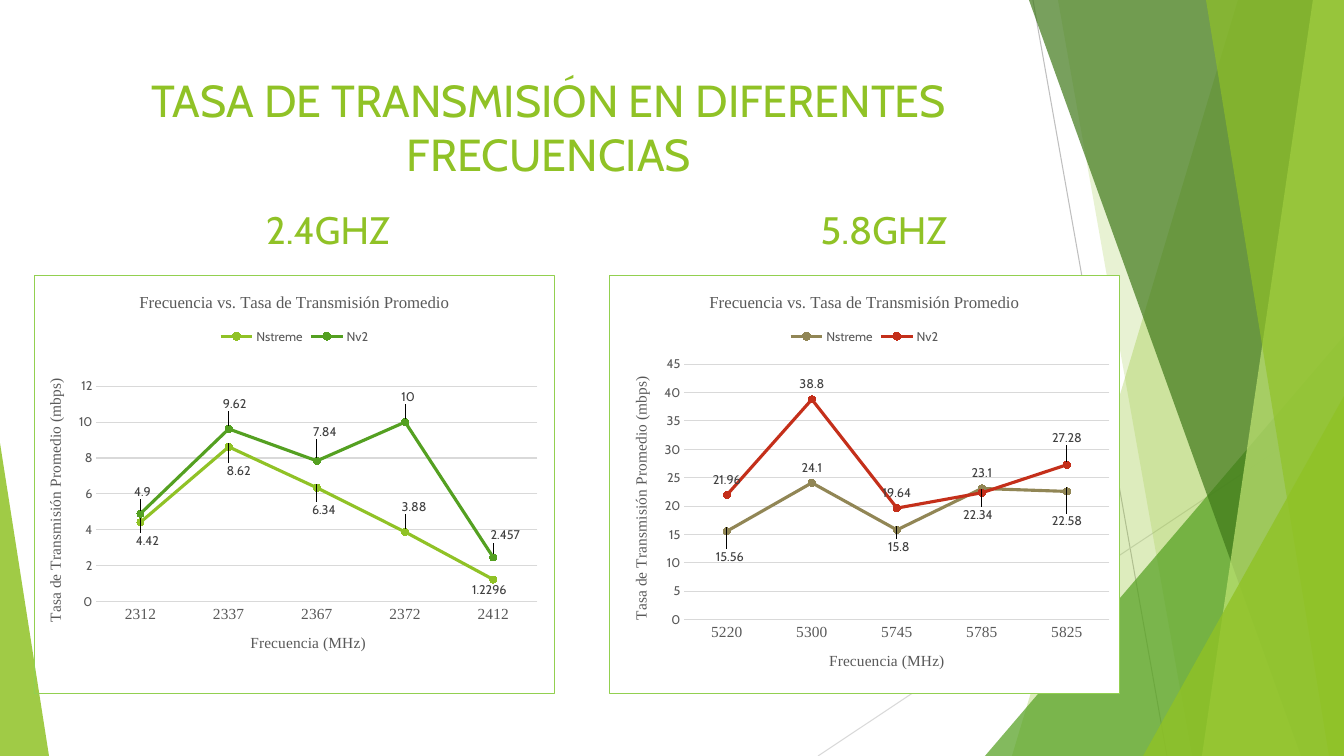
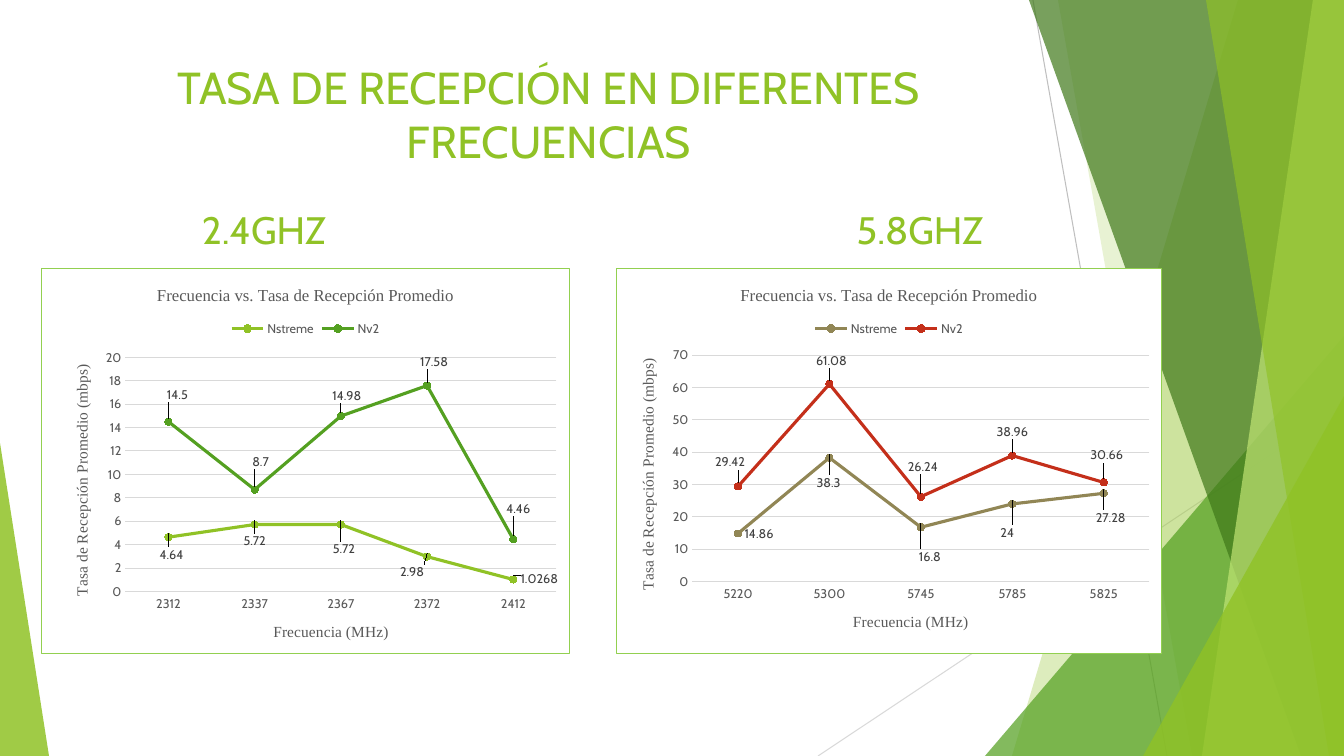
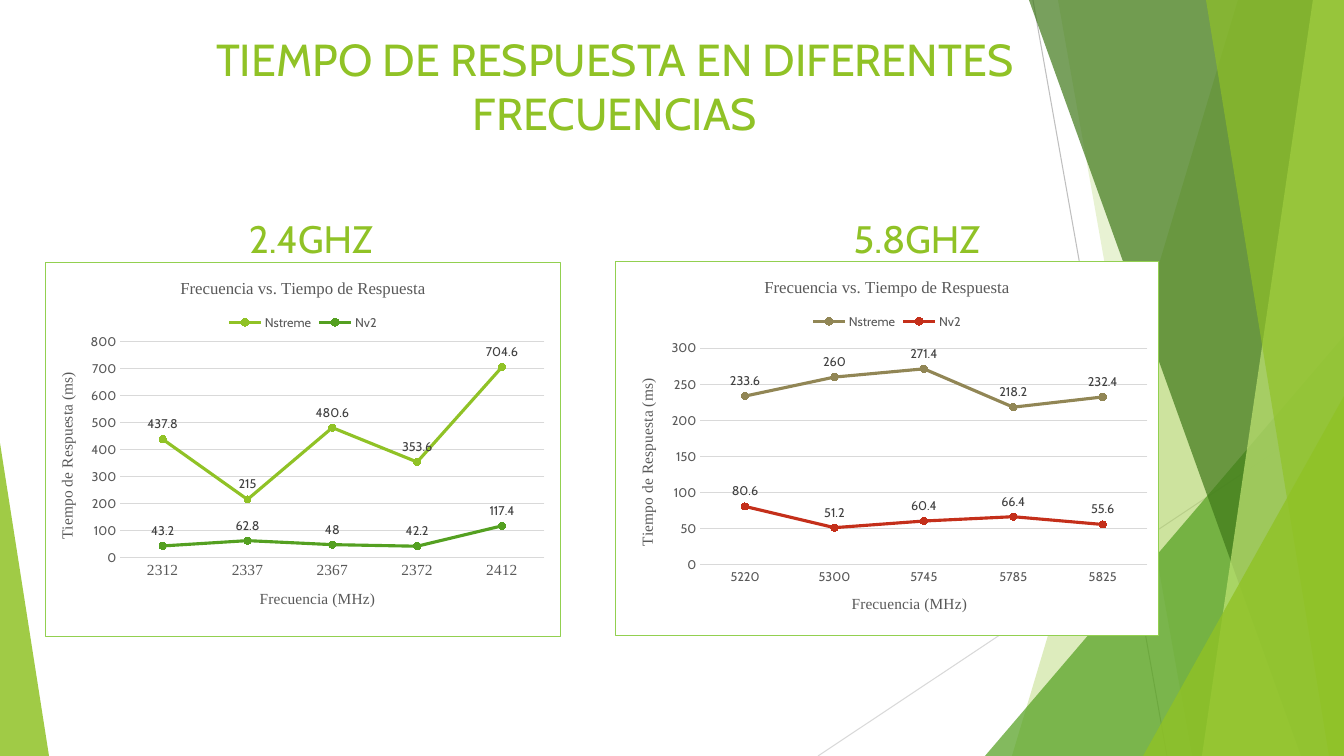
"""Build three slides that compare Nstreme and Nv2 in the 2.4 and 5.8 GHz bands."""
import pptx
import pptx.chart.data
import pptx.dml.color
import pptx.enum.chart
import pptx.enum.shapes
import pptx.enum.text
import pptx.oxml
import pptx.oxml.ns
import pptx.util

RGBColor = pptx.dml.color.RGBColor
WHITE = RGBColor(0xFF, 0xFF, 0xFF)
LIME = RGBColor(0x90, 0xC2, 0x26)
GREEN = RGBColor(0x54, 0xA0, 0x21)
FOREST = RGBColor(0x3F, 0x78, 0x19)
PALE_LIME = RGBColor(0xC0, 0xE4, 0x74)
BORDER_GREEN = RGBColor(0x92, 0xD0, 0x50)
KHAKI = RGBColor(0x91, 0x86, 0x55)
RED = RGBColor(0xC4, 0x2F, 0x1A)
LABEL_GREY = RGBColor(0x40, 0x40, 0x40)
TEXT_GREY = RGBColor(0x59, 0x59, 0x59)
LINE_GREY = RGBColor(0xBF, 0xBF, 0xBF)
GRID_GREY = RGBColor(0xD9, 0xD9, 0xD9)

SANS, SERIF = "Cabin", "Times New Roman"
WIDTH, HEIGHT = 1344, 756
EMU_PER_PX = 12192000 / WIDTH
TITLE_WIDTH, TITLE_HEIGHT = 948, 145
LABEL_WIDTH, LABEL_HEIGHT = 200, 56

BACKDROP = [
    ("line", (1033, 0, 1167, 756), LINE_GREY, 100),
    ("line", (1344, 406, 818, 756), GRID_GREY, 100),
    ("band", (1238, 1012), LIME, 30),
    ("band", (1058, 1192), LIME, 20),
    ("triangle", (985, 336, 359, 420, 1), GREEN, 72),
    ("band", (1029, 1301), FOREST, 70),
    ("band", (1313, 1202), PALE_LIME, 70),
    ("band", (1206, 1329), LIME, 65),
    ("triangle", (1143, 396, 201, 360, 1), LIME, 80),
    ("triangle", (0, 443, 49, 313, 0), LIME, 85),
]

BANDS = [
    {"name": "2.4GHZ", "categories": ["2312", "2337", "2367", "2372", "2412"],
     "colors": (LIME, GREEN), "fill": None},
    {"name": "5.8GHZ", "categories": ["5220", "5300", "5745", "5785", "5825"],
     "colors": (KHAKI, RED), "fill": WHITE},
]
SERIES_NAMES = ("Nstreme", "Nv2")
AT_POINT = [(0, 0)] * 5
SERIF_CATEGORIES, SANS_CATEGORIES = (SERIF, 11), (SANS, 9)

SLIDES = [
    {"title": "TASA DE TRANSMISIÓN EN DIFERENTES FRECUENCIAS", "title_at": (75, 68),
     "chart_title": "Frecuencia vs. Tasa de Transmisión Promedio",
     "value_title": "Tasa de Transmisión Promedio (mbps)",
     "label_top": 201, "label_centers": (328, 884),
     "charts": [
         {"box": (34, 275, 521, 419), "plot": (96, 386, 538, 602), "scale": (12, 2),
          "category_font": SERIF_CATEGORIES,
          "values": ([4.42, 8.62, 6.34, 3.88, 1.2296], [4.9, 9.62, 7.84, 10, 2.457]),
          "shifts": ([(7, 34), (10, 39), (7, 37), (9, -10), (-4, 26)],
                     [(2, -7), (6, -10), (8, -14), (3, -10), (12, -7)])},
         {"box": (609, 275, 511, 419), "plot": (684, 364, 1110, 620), "scale": (45, 5),
          "category_font": SERIF_CATEGORIES,
          "values": ([15.56, 24.1, 15.8, 23.1, 22.58], [21.96, 38.8, 19.64, 22.34, 27.28]),
          "shifts": ([(3, 41), (0, 0), (2, 32), (0, 0), (0, 45)],
                     [(0, 0), (0, 0), (0, 0), (-4, 37), (0, -12)])},
     ]},
    {"title": "TASA DE RECEPCIÓN EN DIFERENTES FRECUENCIAS", "title_at": (75, 55),
     "chart_title": "Frecuencia vs. Tasa de Recepción Promedio",
     "value_title": "Tasa de Recepción Promedio (mbps)",
     "label_top": 201, "label_centers": (264, 920),
     "charts": [
         {"box": (41, 268, 529, 386), "plot": (125, 357, 557, 592), "scale": (20, 2),
          "category_font": SANS_CATEGORIES,
          "values": ([4.64, 5.72, 5.72, 2.98, 1.0268], [14.5, 8.7, 14.98, 17.58, 4.46]),
          "shifts": ([(3, 33), (0, 32), (3, 40), (-15, 31), (26, 15)],
                     [(9, -12), (6, -13), (6, -5), (7, -9), (5, -15)])},
         {"box": (616, 268, 546, 386), "plot": (692, 355, 1150, 582), "scale": (70, 10),
          "category_font": SANS_CATEGORIES,
          "values": ([14.86, 38.3, 16.8, 24, 27.28], [29.42, 61.08, 26.24, 38.96, 30.66]),
          "shifts": ([(21, 16), (-1, 40), (9, 45), (-5, 44), (7, 40)],
                     [(-8, -9), (2, -8), (2, -15), (0, -9), (3, -12)])},
     ]},
    {"title": "TIEMPO DE RESPUESTA EN DIFERENTES FRECUENCIAS", "title_at": (141, 27),
     "chart_title": "Frecuencia vs. Tiempo de Respuesta",
     "value_title": "Tiempo de Respuesta (ms)",
     "label_top": 210, "label_centers": (311, 917),
     "charts": [
         {"box": (45, 262, 516, 375), "plot": (120, 341, 545, 558), "scale": (800, 100),
          "category_font": SERIF_CATEGORIES,
          "values": ([437.8, 215, 480.6, 353.6, 704.6], [43.2, 62.8, 48, 42.2, 117.4]),
          "shifts": (AT_POINT, AT_POINT)},
         {"box": (615, 261, 544, 375), "plot": (700, 348, 1148, 565), "scale": (300, 50),
          "category_font": SANS_CATEGORIES,
          "values": ([233.6, 260, 271.4, 218.2, 232.4], [80.6, 51.2, 60.4, 66.4, 55.6]),
          "shifts": (AT_POINT, AT_POINT)},
     ]},
]


def px(*lengths):
    return [pptx.util.Emu(round(length * EMU_PER_PX)) for length in lengths]


def xml(text):
    namespaces = pptx.oxml.ns.nsdecls("a", "c")
    return pptx.oxml.parse_xml(text.replace(">", f" {namespaces}>", 1)
                               if "/>" not in text.split(">")[0] + ">"
                               else text.replace("/>", f" {namespaces}/>", 1))


def style_font(font, name, size, color):
    font.name, font.size, font.bold = name, pptx.util.Pt(size), False
    font.color.rgb = color


def write(text_frame, text, name, size, color):
    paragraph = text_frame.paragraphs[0]
    paragraph.alignment = pptx.enum.text.PP_ALIGN.CENTER
    run = paragraph.add_run()
    run.text = text
    style_font(run.font, name, size, color)


def write_heading(shape, text, size):
    frame = shape.text_frame
    frame.word_wrap = True
    frame.auto_size = pptx.enum.text.MSO_AUTO_SIZE.NONE
    frame.vertical_anchor = pptx.enum.text.MSO_ANCHOR.TOP
    write(frame, text, SANS, size, LIME)


def draw_line(shapes, ends, color):
    line = shapes.add_connector(pptx.enum.shapes.MSO_CONNECTOR.STRAIGHT, *px(*ends))
    line.line.color.rgb = color
    line.line.width = pptx.util.Pt(0.75)
    line.element.xpath("./p:spPr")[0].append(xml("<a:effectLst/>"))
    return line


def draw_area(shapes, kind, geometry, color, opacity):
    if kind == "band":
        top_x, bottom_x = geometry
        builder = shapes.build_freeform(*px(top_x, 0))
        corners = [(WIDTH, 0), (WIDTH, HEIGHT), (bottom_x, HEIGHT)]
        builder.add_line_segments([px(*corner) for corner in corners], close=True)
        area = builder.convert_to_shape()
    else:
        *box, apex = geometry
        area = shapes.add_shape(pptx.enum.shapes.MSO_SHAPE.ISOSCELES_TRIANGLE, *px(*box))
        area.adjustments[0] = apex
    area.shadow.inherit = False
    area.line.fill.background()
    area.fill.solid()
    area.fill.fore_color.rgb = color
    area.element.xpath("./p:spPr/a:solidFill/a:srgbClr")[0].append(
        xml(f'<a:alpha val="{opacity * 1000}"/>'))
    return area


def add_backdrop(slide, layout):
    tree = layout.element.cSld.spTree
    for index, (kind, geometry, color, opacity) in enumerate(BACKDROP):
        if kind == "line":
            shape = draw_line(slide.shapes, geometry, color)
        else:
            shape = draw_area(slide.shapes, kind, geometry, color, opacity)
        shape.element.xpath("./*/p:cNvPr")[0].set("id", str(100 + index))
        tree.insert(2 + index, shape.element)


def style_axis(axis, title, name, size):
    axis.major_tick_mark = axis.minor_tick_mark = pptx.enum.chart.XL_TICK_MARK.NONE
    style_font(axis.tick_labels.font, name, size, TEXT_GREY)
    write(axis.axis_title.text_frame, title, SERIF, 11, TEXT_GREY)


def style_series(series, color):
    series.smooth = False
    series.format.line.color.rgb = color
    series.format.line.width = pptx.util.Pt(2.25)
    series.marker.style = pptx.enum.chart.XL_MARKER_STYLE.CIRCLE
    series.marker.size = 5
    series.marker.format.fill.solid()
    series.marker.format.fill.fore_color.rgb = color
    series.marker.format.line.color.rgb = color
    labels = series.data_labels
    labels.show_value = True
    labels.position = pptx.enum.chart.XL_LABEL_POSITION.ABOVE
    style_font(labels.font, SANS, 9, LABEL_GREY)


def shift_labels(series, series_element, shifts, width, height):
    for index, (right, down) in enumerate(shifts):
        if (right, down) == (0, 0):
            continue
        label = series.points[index].data_label
        style_font(label.font, SANS, 9, LABEL_GREY)
        label.position = pptx.enum.chart.XL_LABEL_POSITION.ABOVE
        anchor = series_element.xpath(f'c:dLbls/c:dLbl/c:idx[@val="{index}"]')[0]
        anchor.addnext(xml(f'<c:layout><c:manualLayout><c:x val="{right / width:.4f}"/>'
                           f'<c:y val="{down / height:.4f}"/></c:manualLayout></c:layout>'))


def place_plot(chart, box, plot):
    left, top, width, height = box
    x1, y1, x2, y2 = plot
    area = chart.element.xpath("c:chart/c:plotArea")[0]
    for layout in area.xpath("c:layout"):
        area.remove(layout)
    area.insert(0, xml(
        '<c:layout><c:manualLayout><c:layoutTarget val="inner"/>'
        '<c:xMode val="edge"/><c:yMode val="edge"/>'
        f'<c:x val="{(x1 - left) / width:.4f}"/><c:y val="{(y1 - top) / height:.4f}"/>'
        f'<c:w val="{(x2 - x1) / width:.4f}"/><c:h val="{(y2 - y1) / height:.4f}"/>'
        '</c:manualLayout></c:layout>'))


def frame_chart(chart, fill):
    paint = f'<a:solidFill><a:srgbClr val="{fill}"/></a:solidFill>' if fill else "<a:noFill/>"
    chart.element.xpath("c:chart")[0].addnext(xml(
        f'<c:spPr>{paint}<a:ln w="9525"><a:solidFill><a:srgbClr val="{BORDER_GREEN}"/>'
        '</a:solidFill></a:ln></c:spPr>'))


def add_line_chart(slide, topic, band, content):
    data = pptx.chart.data.CategoryChartData()
    data.categories = band["categories"]
    for name, values in zip(SERIES_NAMES, content["values"]):
        data.add_series(name, values)
    box = content["box"]
    chart = slide.shapes.add_chart(
        pptx.enum.chart.XL_CHART_TYPE.LINE_MARKERS, *px(*box), data).chart
    chart.font.name, chart.font.size = SANS, pptx.util.Pt(10)
    chart.has_title = True
    write(chart.chart_title.text_frame, topic["chart_title"], SERIF, 12, TEXT_GREY)
    chart.has_legend = True
    chart.legend.position = pptx.enum.chart.XL_LEGEND_POSITION.TOP
    chart.legend.include_in_layout = False
    style_font(chart.legend.font, SANS, 9, TEXT_GREY)

    style_axis(chart.category_axis, "Frecuencia (MHz)", *content["category_font"])
    chart.category_axis.format.line.color.rgb = GRID_GREY
    value_axis = chart.value_axis
    style_axis(value_axis, topic["value_title"], SANS, 9)
    value_axis.axis_title.element.xpath(".//a:bodyPr")[0].set("rot", "-5400000")
    value_axis.minimum_scale = 0
    value_axis.maximum_scale, value_axis.major_unit = content["scale"]
    value_axis.format.line.fill.background()
    value_axis.major_gridlines.format.line.color.rgb = GRID_GREY
    value_axis.major_gridlines.format.line.width = pptx.util.Pt(0.75)

    plot = chart.plots[0]
    plot.vary_by_categories = False
    elements = chart.element.xpath(".//c:ser")
    for series, element, color, shifts in zip(
            plot.series, elements, band["colors"], content["shifts"]):
        style_series(series, color)
        shift_labels(series, element, shifts, *box[2:])
    place_plot(chart, box, content["plot"])
    frame_chart(chart, band["fill"])


def fill_slide(slide, topic):
    title = slide.shapes.title
    title.left, title.top, title.width, title.height = px(
        *topic["title_at"], TITLE_WIDTH, TITLE_HEIGHT)
    write_heading(title, topic["title"], 32)
    for band, center, content in zip(BANDS, topic["label_centers"], topic["charts"]):
        add_line_chart(slide, topic, band, content)
        label = slide.shapes.add_textbox(*px(
            center - LABEL_WIDTH / 2, topic["label_top"], LABEL_WIDTH, LABEL_HEIGHT))
        write_heading(label, band["name"], 27.3)


def main():
    presentation = pptx.Presentation()
    presentation.slide_width, presentation.slide_height = px(WIDTH, HEIGHT)
    layout = presentation.slide_layouts.get_by_name("Title Only")
    slides = [presentation.slides.add_slide(layout) for _ in SLIDES]
    add_backdrop(slides[0], layout)
    for slide, topic in zip(slides, SLIDES):
        fill_slide(slide, topic)
    presentation.save("out.pptx")


if __name__ == "__main__":
    main()
